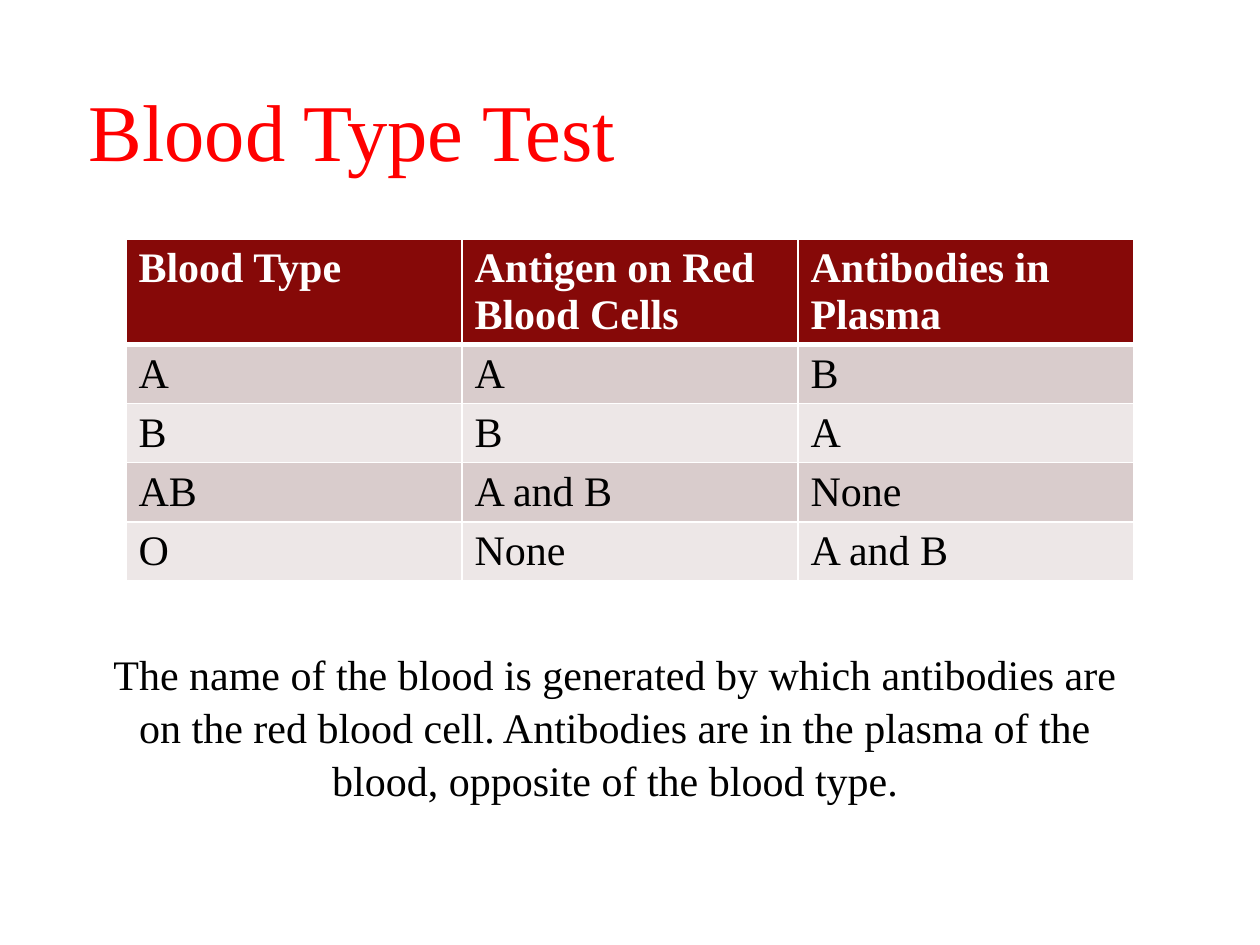
from dataclasses import dataclass

from lxml.etree import SubElement
from pptx import Presentation
from pptx.dml.color import RGBColor as Rgb
from pptx.enum.text import MSO_ANCHOR as Anchor, MSO_AUTO_SIZE as AutoSize, PP_ALIGN as Align
from pptx.oxml.ns import qn
from pptx.util import Emu, Pt

PX = 914400 // 126


@dataclass(frozen=True)
class Theme:
    font: str = "Times New Roman"
    title_size: int = 46
    text_size: int = 24
    title: str = "FF0000"
    text: str = "000000"
    header_text: str = "FFFFFF"
    header_fill: str = "860908"
    bands: tuple = ("D9CCCC", "EDE7E7")
    border: str = "FFFFFF"
    thin: int = 1
    thick: int = 3


THEME = Theme()

BLOOD_TYPES = [
    ["Blood Type", "Antigen on Red Blood Cells", "Antibodies in Plasma"],
    ["A", "A", "B"],
    ["B", "B", "A"],
    ["AB", "A and B", "None"],
    ["O", "None", "A and B"],
]

EXPLANATION = (
    "The name of the blood is generated by which antibodies are on the red "
    "blood cell. Antibodies are in the plasma of the blood, opposite of the "
    "blood type."
)


def px(length):
    return Emu(length * PX)


def write(frame, text, size, color, bold=False, align=Align.LEFT):
    frame.text = text
    para = frame.paragraphs[0]
    para.alignment = align
    for span in para.runs:
        span.font.name = THEME.font
        span.font.size = Pt(size)
        span.font.bold = bold
        span.font.color.rgb = Rgb.from_string(color)
    return para


def add_title(page, text, left, top, width, height):
    title = page.shapes.title
    title.left, title.top, title.width, title.height = map(px, (left, top, width, height))
    frame = title.text_frame
    frame.auto_size = AutoSize.NONE
    frame.vertical_anchor = Anchor.MIDDLE
    write(frame, text, THEME.title_size, THEME.title)


def set_borders(cell, top, bottom):
    properties = cell._tc.get_or_add_tcPr()
    widths = {"a:lnL": THEME.thin, "a:lnR": THEME.thin, "a:lnT": top, "a:lnB": bottom}
    for tag, width in widths.items():
        line = SubElement(properties, qn(tag), w=str(Pt(width)))
        fill = SubElement(line, qn("a:solidFill"))
        SubElement(fill, qn("a:srgbClr"), val=THEME.border)


def style_cell(cell, text, row):
    header = row == 0
    set_borders(
        cell,
        top=THEME.thick if row == 1 else THEME.thin,
        bottom=THEME.thick if header else THEME.thin,
    )
    fill = THEME.header_fill if header else THEME.bands[(row - 1) % 2]
    cell.fill.solid()
    cell.fill.fore_color.rgb = Rgb.from_string(fill)
    color = THEME.header_text if header else THEME.text
    write(cell.text_frame, text, THEME.text_size, color, bold=header)


def add_table(page, rows, left, top, column_width, header_height, row_height):
    columns = len(rows[0])
    height = header_height + row_height * (len(rows) - 1)
    table = page.shapes.add_table(
        len(rows), columns, px(left), px(top), px(column_width * columns), px(height)
    ).table
    for column in table.columns:
        column.width = px(column_width)
    for index, values in enumerate(rows):
        table.rows[index].height = px(row_height if index else header_height)
        for column, text in enumerate(values):
            style_cell(table.cell(index, column), text, index)


def add_text(page, text, left, top, width, height):
    box = page.shapes.add_textbox(*map(px, (left, top, width, height)))
    frame = box.text_frame
    frame.word_wrap = True
    frame.auto_size = AutoSize.SHAPE_TO_FIT_TEXT
    para = write(frame, text, THEME.text_size, THEME.text, align=Align.CENTER)
    para.line_spacing = 1.05


def main():
    deck = Presentation()
    deck.slide_width, deck.slide_height = px(1260), px(945)
    page = deck.slides.add_slide(deck.slide_layouts[5])
    add_title(page, "Blood Type Test", 76, 69, 1008, 120)
    add_table(page, BLOOD_TYPES, 126, 239, 336, 105, 59)
    add_text(page, EXPLANATION, 95, 640, 1040, 165)
    deck.save("out.pptx")


if __name__ == "__main__":
    main()
